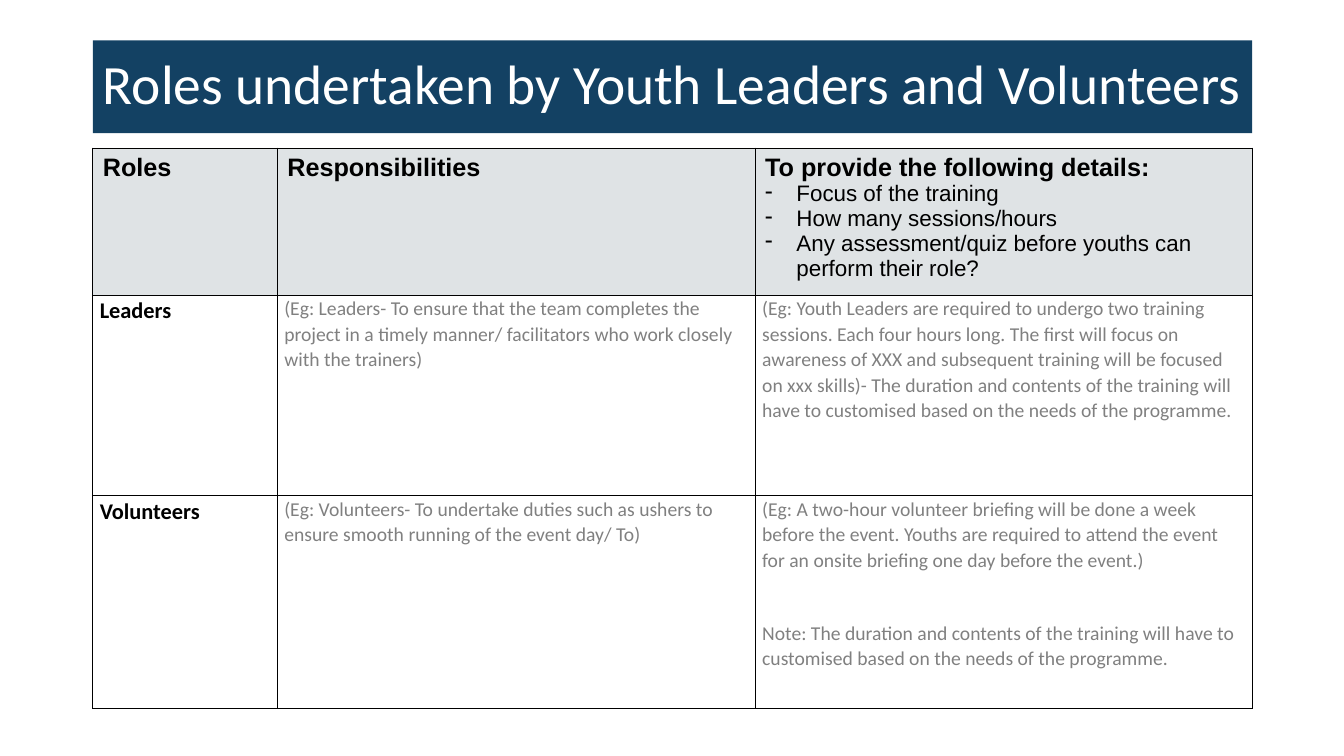
from lxml import etree
from pptx import Presentation
from pptx.dml.color import RGBColor
from pptx.enum.text import MSO_ANCHOR, MSO_AUTO_SIZE, PP_ALIGN
from pptx.oxml.ns import qn
from pptx.util import Inches, Pt

MIDDLE, TOP = MSO_ANCHOR.MIDDLE, MSO_ANCHOR.TOP
NO_FIT, LEFT = MSO_AUTO_SIZE.NONE, PP_ALIGN.LEFT
TITLE_ONLY = 5

PAGE_WIDTH, PAGE_HEIGHT = 13.33, 7.5
MARGIN, CONTENT_WIDTH = 0.92, 11.5
COLUMNS = (1.83, 4.74, 4.93)
ROWS = (1.46, 1.99, 2.11)

COLORS = {
    "navy": "134163",
    "header": "DFE3E5",
    "white": "FFFFFF",
    "black": "000000",
    "hint": "808080",
}

HEADING = {"size": 18, "font": "Arial", "bold": True}
DETAIL = {"size": 16, "font": "Arial", "bullet": "-"}
ROLE = {"size": 16, "bold": True, "spacing": 1.07, "after": 8}
HINT = {"size": 14, "color": "hint", "spacing": 1.07, "after": 8}
NOTE = {**HINT, "before": 26}

TITLE = "Roles undertaken by Youth Leaders and Volunteers"
HEADER = [
    [("Roles", HEADING)],
    [("Responsibilities", HEADING)],
    [
        ("To provide the following details:", HEADING),
        ("Focus of the training", DETAIL),
        ("How many sessions/hours", DETAIL),
        ("Any assessment/quiz before youths can perform their role?", DETAIL),
    ],
]
LEADERS = [
    [("Leaders", ROLE)],
    [("(Eg: Leaders- To ensure that the team completes the project in a timely "
      "manner/ facilitators who work closely with the trainers)", HINT)],
    [("(Eg: Youth Leaders are required to undergo two training sessions. Each four "
      "hours long. The first will focus on awareness of XXX and subsequent training "
      "will be focused on xxx skills)- The duration and contents of the training "
      "will have to customised based on the needs of the programme.", HINT)],
]
VOLUNTEERS = [
    [("Volunteers", ROLE)],
    [("(Eg: Volunteers- To undertake duties such as ushers to ensure smooth running "
      "of the event day/ To)", HINT)],
    [
        ("(Eg: A two-hour volunteer briefing will be done a week before the event. "
         "Youths are required to attend the event for an onsite briefing one day "
         "before the event.)", HINT),
        ("Note: The duration and contents of the training will have to customised "
         "based on the needs of the programme.", NOTE),
    ],
]


def rgb(name):
    return RGBColor.from_string(COLORS[name])


def write(para, text, size, font="Calibri", color="black", bold=False,
          spacing=None, before=0, after=0, bullet=None):
    para.alignment = LEFT
    para.space_before, para.space_after = Pt(before), Pt(after)
    if spacing:
        para.line_spacing = spacing
    if bullet:
        properties = para._p.get_or_add_pPr()
        properties.set("marL", str(Inches(0.31)))
        properties.set("indent", str(-Inches(0.31)))
        etree.SubElement(properties, qn("a:buChar"), char=bullet)
    span = para.add_run()
    span.text = text
    span.font.size, span.font.name, span.font.bold = Pt(size), font, bold
    span.font.color.rgb = rgb(color)


def add_borders(cell):
    """Draw a thin black line on all four sides; lines must precede the fill."""
    properties = cell._tc.get_or_add_tcPr()
    for position, side in enumerate(("lnL", "lnR", "lnT", "lnB")):
        line = etree.Element(qn(f"a:{side}"), w=str(Pt(1)))
        fill = etree.SubElement(line, qn("a:solidFill"))
        etree.SubElement(fill, qn("a:srgbClr"), val=COLORS["black"])
        properties.insert(position, line)


def fill_cell(cell, paragraphs, is_header):
    cell.fill.solid()
    cell.fill.fore_color.rgb = rgb("header" if is_header else "white")
    add_borders(cell)
    cell.vertical_anchor = TOP
    cell.margin_left = cell.margin_right = Inches(0.1 if is_header else 0.07)
    cell.margin_top = cell.margin_bottom = Inches(0.05 if is_header else 0)
    frame = cell.text_frame
    for index, (text, style) in enumerate(paragraphs):
        para = frame.add_paragraph() if index else frame.paragraphs[0]
        write(para, text, **style)


def add_title(page):
    box = page.shapes.title
    box.left, box.top = Inches(MARGIN), Inches(0.4)
    box.width, box.height = Inches(CONTENT_WIDTH), Inches(0.92)
    box.fill.solid()
    box.fill.fore_color.rgb = rgb("navy")
    frame = box.text_frame
    frame.auto_size, frame.word_wrap = NO_FIT, True
    frame.vertical_anchor = MIDDLE
    write(frame.paragraphs[0], TITLE, size=39.6, color="white", spacing=0.9)


def add_roles_table(page):
    table = page.shapes.add_table(
        len(ROWS), len(COLUMNS), Inches(MARGIN), Inches(1.47),
        Inches(CONTENT_WIDTH), Inches(sum(ROWS))).table
    table.horz_banding = False
    for column, width in zip(table.columns, COLUMNS):
        column.width = Inches(width)
    for index, contents in enumerate((HEADER, LEADERS, VOLUNTEERS)):
        row = table.rows[index]
        row.height = Inches(ROWS[index])
        for cell, paragraphs in zip(row.cells, contents):
            fill_cell(cell, paragraphs, is_header=index == 0)


def main():
    deck = Presentation()
    deck.slide_width, deck.slide_height = Inches(PAGE_WIDTH), Inches(PAGE_HEIGHT)
    page = deck.slides.add_slide(deck.slide_layouts[TITLE_ONLY])
    add_title(page)
    add_roles_table(page)
    deck.save("out.pptx")


if __name__ == "__main__":
    main()
